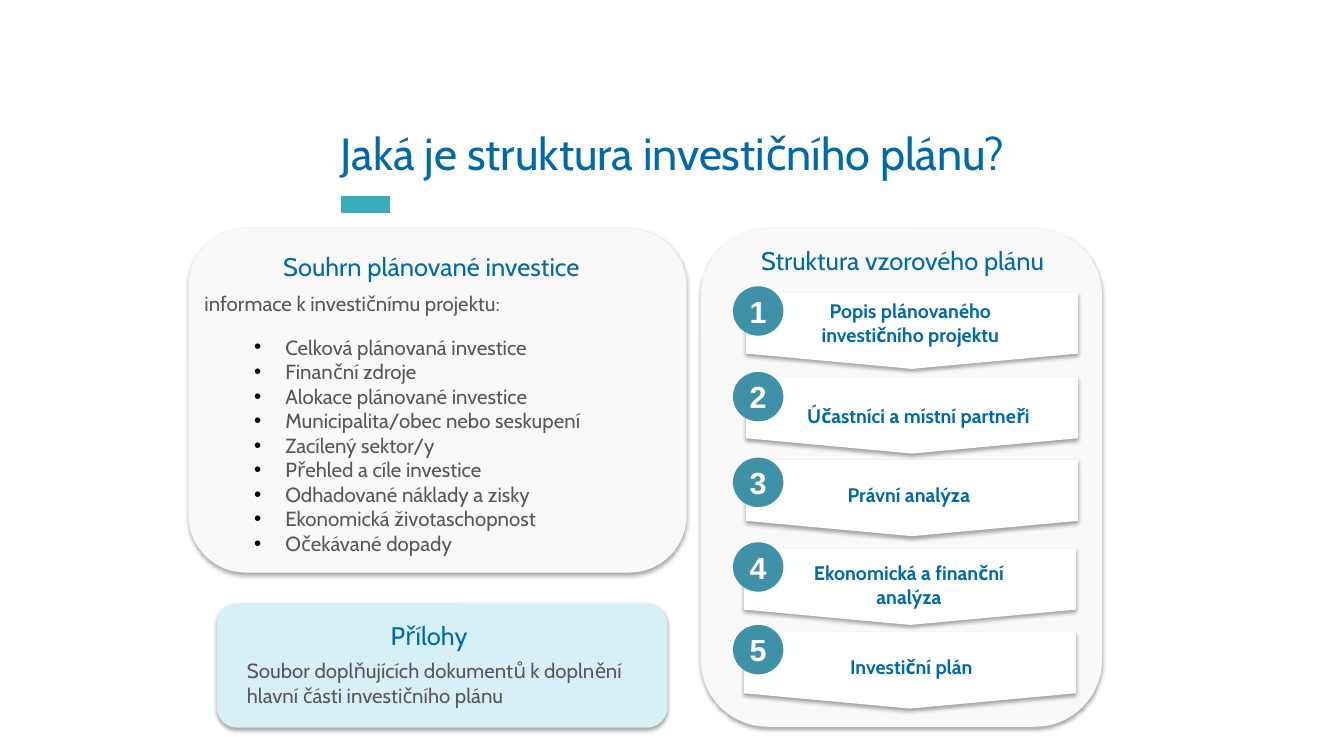
from dataclasses import dataclass

from lxml.etree import SubElement
from pptx import Presentation
from pptx.dml.color import RGBColor
from pptx.enum.shapes import MSO_CONNECTOR, MSO_SHAPE as SHAPE
from pptx.enum.text import MSO_ANCHOR as ANCHOR, PP_ALIGN as ALIGN
from pptx.oxml.ns import qn
from pptx.util import Inches, Pt


@dataclass(frozen=True)
class Theme:
    font: str = "Cabin"
    digit_font: str = "Arial"
    blue: str = "0069A9"
    gray: str = "575757"
    teal: str = "3F91A7"
    accent: str = "39ADBB"
    panel: str = "F9F9F9"
    pale_blue: str = "D6F0F6"
    white: str = "FFFFFF"
    black: str = "000000"
    title_size: float = 32.1
    heading_size: float = 18.2
    body_size: float = 14.6
    label_size: float = 14
    digit_size: float = 21.8


THEME = Theme()
TITLE = dict(size=THEME.title_size, color=THEME.blue)
HEADING = dict(size=THEME.heading_size, color=THEME.blue)
BODY = dict(size=THEME.body_size, color=THEME.gray)
LABEL = dict(size=THEME.label_size, color=THEME.blue, bold=True)
DIGIT = dict(size=THEME.digit_size, color=THEME.white, bold=True, name=THEME.digit_font)

SUMMARY_ITEMS = [
    "Celková plánovaná investice",
    "Finanční zdroje",
    "Alokace plánované investice",
    "Municipalita/obec nebo seskupení",
    "Zacílený sektor/y",
    "Přehled a cíle investice",
    "Odhadované náklady a zisky",
    "Ekonomická životaschopnost",
    "Očekávané dopady",
]

# Text, label area, banner left and top, badge top
STEPS = [
    ("Popis plánovaného investičního projektu", (7.7, 2.92, 2.66, 0.59), (7.4, 2.9), 2.84),
    ("Účastníci a místní partneři", (7.82, 3.96, 2.58, 0.58), (7.4, 3.74), 3.69),
    ("Právní analýza", (8.21, 4.74, 1.61, 0.34), (7.4, 4.56), 4.54),
    ("Ekonomická a finanční analýza", (7.74, 5.52, 2.55, 0.57), (7.38, 5.44), 5.38),
    ("Investiční plán", (8.06, 6.45, 1.96, 0.34), (7.38, 6.27), 6.2),
]


def inches(area):
    return [Inches(value) for value in area]


def write(para, text, style, **layout):
    """Add one formatted span to a paragraph."""
    for key, value in layout.items():
        setattr(para, key, value)
    span = para.add_run()
    span.text = text
    values = {"name": THEME.font, "bold": False, **style}
    span.font.color.rgb = RGBColor.from_string(values.pop("color"))
    values["size"] = Pt(values["size"])
    for key, value in values.items():
        setattr(span.font, key, value)


def add_text(page, area, text, style, **layout):
    frame = page.shapes.add_textbox(*inches(area)).text_frame
    frame.word_wrap = True
    write(frame.paragraphs[0], text, style, **layout)


def add_shadow(shape):
    effects = shape._element.spPr.find(qn("a:effectLst"))
    shadow = SubElement(effects, qn("a:outerShdw"), blurRad=str(Pt(3.1)),
                        dist=str(Pt(1.8)), dir="5400000", rotWithShape="0")
    color = SubElement(shadow, qn("a:srgbClr"), val=THEME.black)
    SubElement(color, qn("a:alpha"), val="35000")


def add_shape(page, kind, area, fill, shadow=True):
    shape = page.shapes.add_shape(kind, *inches(area))
    shape.shadow.inherit = False
    shape.fill.solid()
    shape.fill.fore_color.rgb = RGBColor.from_string(fill)
    shape.line.fill.background()
    if shadow:
        add_shadow(shape)
    return shape


def place(box, area, anchor):
    box.left, box.top, box.width, box.height = inches(area)
    box.text_frame.word_wrap = True
    box.text_frame.vertical_anchor = anchor


def add_title(page):
    title = page.shapes.title
    place(title, (3.28, 0.6, 8.13, 1.23), ANCHOR.BOTTOM)
    write(title.text_frame.paragraphs[0], "Jaká je struktura investičního plánu?", TITLE,
          alignment=ALIGN.LEFT, line_spacing=0.8)
    # Accent bar below the title
    bar = page.shapes.add_connector(MSO_CONNECTOR.STRAIGHT, *inches((3.38, 2.03, 3.87, 2.03)))
    bar.line.color.rgb = RGBColor.from_string(THEME.accent)
    bar.line.width = Pt(12)
    SubElement(bar._element.spPr, qn("a:effectLst"))


def add_bullet(para):
    props = para._p.get_or_add_pPr()
    props.set("marL", str(Inches(0.31)))
    props.set("indent", str(-Inches(0.31)))
    SubElement(SubElement(props, qn("a:buClr")), qn("a:srgbClr"), val=THEME.black)
    SubElement(props, qn("a:buFont"), typeface=THEME.digit_font)
    SubElement(props, qn("a:buChar"), char="•")


def fill_list(body, items):
    place(body, (2.42, 3.27, 3.98, 2.3), ANCHOR.TOP)
    frame = body.text_frame
    for index, item in enumerate(items):
        para = frame.add_paragraph() if index else frame.paragraphs[0]
        add_bullet(para)
        write(para, item, BODY, space_before=Pt(0), alignment=ALIGN.LEFT)


def add_summary(page, body):
    panel = add_shape(page, SHAPE.ROUNDED_RECTANGLE, (1.87, 2.27, 4.94, 3.41), THEME.panel)
    # Bring the list in front of its panel
    panel._element.addnext(body._element)
    add_text(page, (1.93, 2.84, 5.2, 0.35), "informace k investičnímu projektu:", BODY)
    add_text(page, (2.01, 2.41, 4.54, 0.44), "Souhrn plánované investice", HEADING,
             alignment=ALIGN.CENTER, line_spacing=1.1)
    fill_list(body, SUMMARY_ITEMS)


def add_annexes(page):
    add_shape(page, SHAPE.ROUNDED_RECTANGLE, (2.15, 5.99, 4.47, 1.23), THEME.pale_blue)
    add_text(page, (2.18, 6.07, 4.15, 0.44), "Přílohy", HEADING,
             alignment=ALIGN.CENTER, line_spacing=1.1)
    add_text(page, (2.35, 6.48, 4.12, 0.59),
             "Soubor doplňujících dokumentů k doplnění hlavní části investičního plánu", BODY)


def add_step(page, number, text, label_area, corner, badge_top):
    add_shape(page, SHAPE.FLOWCHART_OFFPAGE_CONNECTOR, (*corner, 3.29, 0.76), THEME.white)
    badge = add_shape(page, SHAPE.OVAL, (7.27, badge_top, 0.5, 0.49), THEME.teal, shadow=False)
    frame = badge.text_frame
    for side in ("left", "top", "right", "bottom"):
        setattr(frame, f"margin_{side}", 0)
    frame.vertical_anchor = ANCHOR.MIDDLE
    write(frame.paragraphs[0], str(number), DIGIT, alignment=ALIGN.CENTER)
    add_text(page, label_area, text, LABEL, alignment=ALIGN.CENTER)


def add_structure(page):
    add_shape(page, SHAPE.ROUNDED_RECTANGLE, (6.95, 2.27, 3.98, 4.94), THEME.panel)
    add_text(page, (7.45, 2.35, 3.48, 0.44), "Struktura vzorového plánu", HEADING,
             line_spacing=1.1)
    for number, step in enumerate(STEPS, 1):
        add_step(page, number, *step)


def main():
    deck = Presentation()
    deck.slide_width, deck.slide_height = inches((13.33, 7.5))
    page = deck.slides.add_slide(deck.slide_layouts[1])
    add_title(page)
    add_summary(page, page.placeholders[1])
    add_annexes(page)
    add_structure(page)
    deck.save("out.pptx")


if __name__ == "__main__":
    main()
